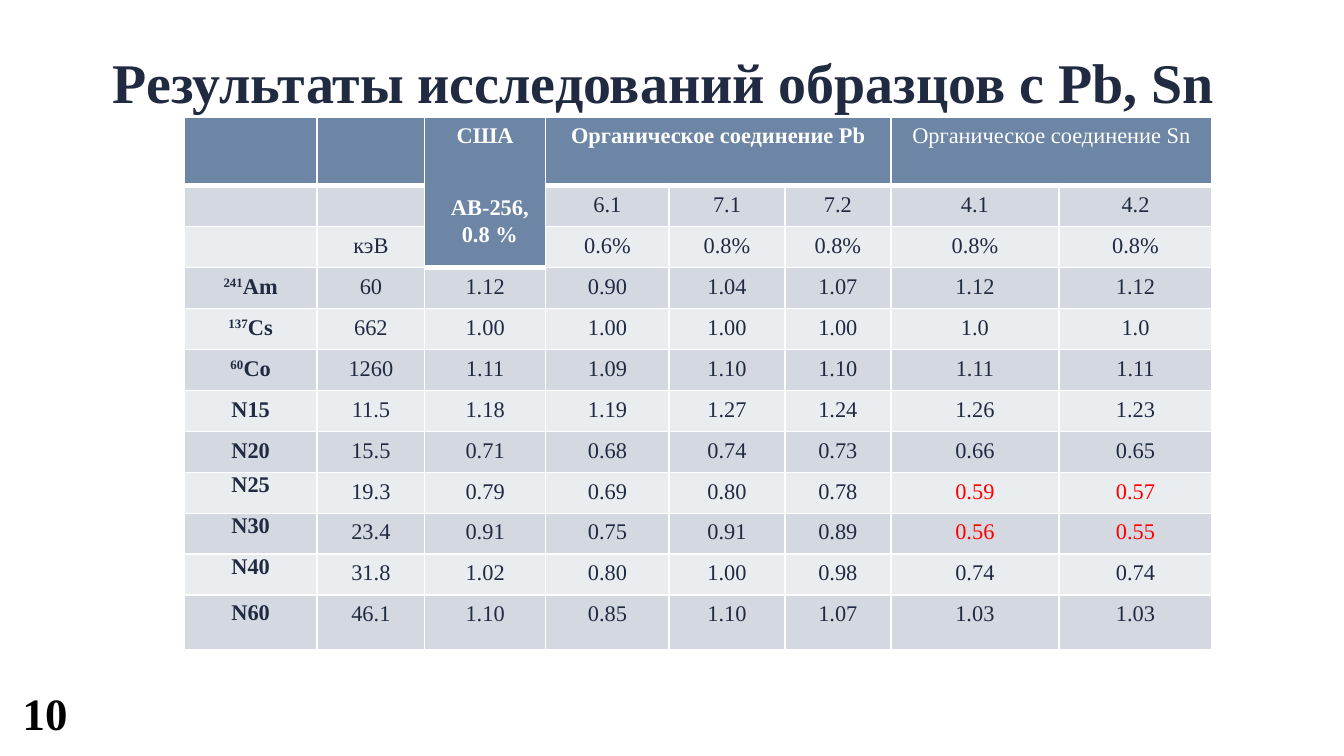
from lxml import etree
from pptx import Presentation
from pptx.dml.color import RGBColor
from pptx.enum.text import MSO_ANCHOR, MSO_AUTO_SIZE, PP_ALIGN
from pptx.oxml.ns import qn
from pptx.util import Inches, Pt

CENTER, LEFT = PP_ALIGN.CENTER, PP_ALIGN.LEFT
TOP, NO_AUTOFIT = MSO_ANCHOR.TOP, MSO_AUTO_SIZE.NONE
TITLE_ONLY = 5
FONT = "Times New Roman"
WHITE, NAVY, RED, BLACK = "FFFFFF", "202A41", "FF0000", "000000"
HEADER_FILL, BAND_FILLS = "6E86A5", ("D4D8E0", "EAEDF0")


def color(value):
    return RGBColor.from_string(value)


def add_run(paragraph, text, size, hex_color, bold):
    run = paragraph.add_run()
    run.text = text
    values = {"name": FONT, "size": Pt(size), "bold": bold}
    for name, value in values.items():
        setattr(run.font, name, value)
    run.font.color.rgb = color(hex_color)
    return run


# Widescreen slide, 16 by 9
presentation = Presentation()
presentation.slide_width = Inches(10)
presentation.slide_height = Inches(10) * 9 // 16
slide = presentation.slides.add_slide(presentation.slide_layouts[TITLE_ONLY])

# Table grid
rows = [
    ["", "", "США", "Органическое соединение Pb", "", "", "Органическое соединение Sn", ""],
    ["", "", "", "6.1", "7.1", "7.2", "4.1", "4.2"],
    ["", "кэВ", "", "0.6%", "0.8%", "0.8%", "0.8%", "0.8%"],
    ["Am", "60", "1.12", "0.90", "1.04", "1.07", "1.12", "1.12"],
    ["Cs", "662", "1.00", "1.00", "1.00", "1.00", "1.0", "1.0"],
    ["Co", "1260", "1.11", "1.09", "1.10", "1.10", "1.11", "1.11"],
    ["N15", "11.5", "1.18", "1.19", "1.27", "1.24", "1.26", "1.23"],
    ["N20", "15.5", "0.71", "0.68", "0.74", "0.73", "0.66", "0.65"],
    ["N25", "19.3", "0.79", "0.69", "0.80", "0.78", "0.59", "0.57"],
    ["N30", "23.4", "0.91", "0.75", "0.91", "0.89", "0.56", "0.55"],
    ["N40", "31.8", "1.02", "0.80", "1.00", "0.98", "0.74", "0.74"],
    ["N60", "46.1", "1.10", "0.85", "1.10", "1.07", "1.03", "1.03"],
]
mass_numbers = {"Am": "241", "Cs": "137", "Co": "60"}
red_values = {"0.59", "0.57", "0.56", "0.55"}
column_widths = [0.99, 0.8, 0.9, 0.92, 0.86, 0.79, 1.25, 1.14]
row_heights = [Inches(0.51)] + [Inches(3.05) // 10] * 10 + [Inches(0.41)]

frame = slide.shapes.add_table(
    len(rows), len(column_widths), Inches(1.37), Inches(0.87), Inches(7.65), Inches(3.97)
)
table = frame.table
table.horz_banding = False
for column, width in zip(table.columns, column_widths):
    column.width = Inches(width)
for row, height in zip(table.rows, row_heights):
    row.height = height
for first, last in (((0, 2), (2, 2)), ((0, 3), (0, 5)), ((0, 6), (0, 7))):
    table.cell(*first).merge(table.cell(*last))

# Cell text, fills and borders
for row_index, texts in enumerate(rows):
    for column_index, text in enumerate(texts):
        cell = table.cell(row_index, column_index)
        header = row_index == 0 or (column_index == 2 and row_index < 3)
        row_label = column_index == 0

        # Empty cells and the last row labels have tighter margins
        tight = not text or (row_label and row_index >= 8)
        side, edge = (0.07, 0) if tight else (0.1, 0.05)
        if row_label and text == "N60":
            edge = 0.04
        cell.margin_left = cell.margin_right = Inches(side)
        cell.margin_top = cell.margin_bottom = Inches(edge)

        if text:
            paragraph = cell.text_frame.paragraphs[0]
            paragraph.alignment = CENTER
            text_color = WHITE if header else RED if text in red_values and column_index >= 6 else NAVY
            bold = row_label or (header and column_index < 6)
            if text in mass_numbers:
                mass = add_run(paragraph, mass_numbers[text], 12, text_color, bold)
                mass.font._element.set("baseline", "30000")
            add_run(paragraph, text, 12, text_color, bold)

        properties = cell._tc.get_or_add_tcPr()
        for border in ("lnL", "lnR", "lnT", "lnB"):
            heavy = border == "lnB" and header and row_index in (0, 2)
            line = etree.SubElement(properties, qn(f"a:{border}"), w=str(Pt(3 if heavy else 1)))
            line_fill = etree.SubElement(line, qn("a:solidFill"))
            etree.SubElement(line_fill, qn("a:srgbClr"), val=WHITE)
        cell.fill.solid()
        cell.fill.fore_color.rgb = color(HEADER_FILL if header else BAND_FILLS[(row_index - 1) % 2])

# Sample label over the table header, slide number, and the title in front
sample_label = slide.shapes.add_textbox(Inches(3.23), Inches(1.34), Inches(0.83), Inches(0.29))
slide_number = slide.shapes.add_textbox(Inches(0.07), Inches(5.05), Inches(0.67), Inches(0.5))
title = slide.shapes.title
title.left, title.top, title.width, title.height = map(Inches, (0.74, 0.25, 9.07, 0.63))
slide.shapes._spTree.append(title._element)

for shape, text, size, text_color, alignment, margin in (
    (sample_label, "AB-256, 0.8 %", 12, WHITE, CENTER, 0.1),
    (slide_number, "10", 24, BLACK, LEFT, 0.05),
    (title, "Результаты исследований образцов с Pb, Sn", 30, NAVY, LEFT, 0.1),
):
    text_frame = shape.text_frame
    values = {
        "word_wrap": True,
        "auto_size": NO_AUTOFIT,
        "vertical_anchor": TOP,
        "margin_left": Inches(0.1),
        "margin_right": Inches(0.1),
        "margin_top": Inches(margin),
        "margin_bottom": Inches(margin),
    }
    for name, value in values.items():
        setattr(text_frame, name, value)
    paragraph = text_frame.paragraphs[0]
    paragraph.alignment = alignment
    add_run(paragraph, text, size, text_color, True)

presentation.save("out.pptx")
